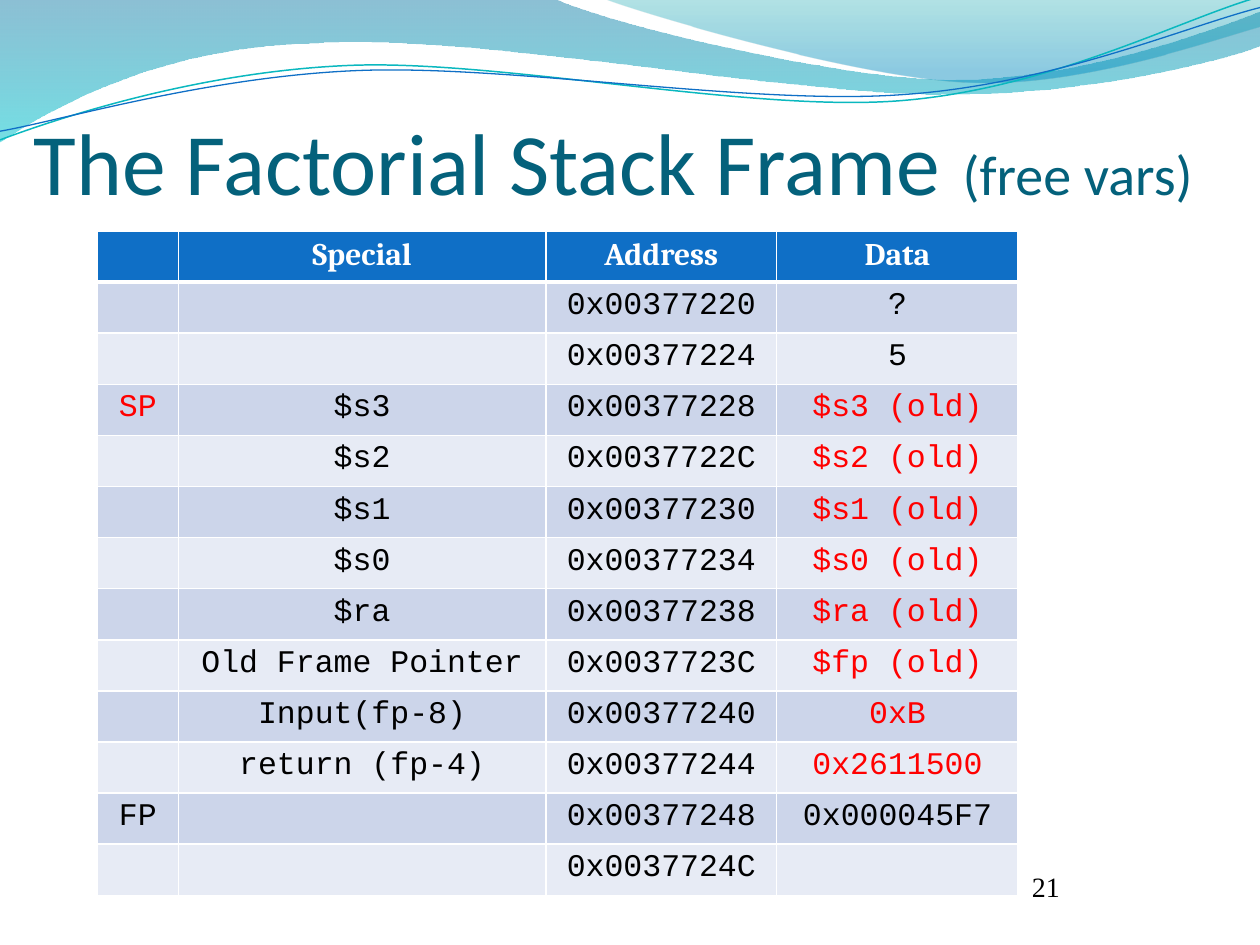
from lxml import etree
from pptx import Presentation
from pptx.dml.color import RGBColor
from pptx.enum.text import MSO_ANCHOR, PP_ALIGN
from pptx.oxml.ns import qn
from pptx.util import Pt

CENTER = PP_ALIGN.CENTER
BOTTOM = MSO_ANCHOR.BOTTOM

COLORS = {
    "title": "04617B", "black": "000000", "red": "FF0000", "white": "FFFFFF",
    "header": "0F6FC6", "odd": "CCD5EA", "even": "E7EBF5",
    "deep": "0074A1", "aqua": "00C6CF", "sea": "00A1A9", "sky": "008BBF",
    "teal line": "0AB8BF", "blue line": "0F6FC6",
}

TITLE = [("The Factorial Stack Frame", 50), (" ", 54), ("(free vars)", 32)]
PAGE_NUMBER = "21"

HEADER = ("", "Special", "Address", "Data")
FIRST_ADDRESS = 0x00377220
FRAME = [
    ("", "", "?"),
    ("", "", "5"),
    ("SP", "$s3", "$s3 (old)"),
    ("", "$s2", "$s2 (old)"),
    ("", "$s1", "$s1 (old)"),
    ("", "$s0", "$s0 (old)"),
    ("", "$ra", "$ra (old)"),
    ("", "Old Frame Pointer", "$fp (old)"),
    ("", "Input(fp-8)", "0xB"),
    ("", "return (fp-4)", "0x2611500"),
    ("FP", "", "0x000045F7"),
    ("", "", ""),
]
RED_TEXTS = {"SP", "0xB", "0x2611500"}
COLUMN_WIDTHS = (46.3, 210, 132, 138)
ROW_HEIGHT = 29.2

# Each wave is a start point and segments: one point is a line, three a curve.
FILLED_WAVES = [
    ((0, 0), [
        [(316.8, -0.7)],
        [(342.7, 12.2), (478.1, 45.4), (545.8, 45.4)],
        [(614.2, 45.4), (689.8, 18.7), (720, 6.5)],
        [(720.7, 25.9)],
        [(707.8, 31.7), (626.4, 54.7), (537.1, 54)],
        [(447.8, 54), (275, 20.2), (185, 24.5)],
        [(92.9, 25.9), (33.1, 59.8), (-0.7, 81.4)],
        [(0, 0)],
    ], [(0, "deep", 45), (1, "aqua", 55)]),
    ((344.9, -0.7), [
        [(366.5, 7.9), (491, 44.6), (553.7, 46.8)],
        [(616.3, 49.7), (691.9, 23), (720, 15.1)],
        [(720, 0)],
        [(344.9, -0.7)],
    ], [(0, "sea", 30), (0.8, "sky", 45)]),
]
LINE_ROTATION = 357.3
LINE_WAVES = [
    ((-1.4, 63), [
        [(33.8, 51.7), (114.1, 29.4), (199.8, 29.9)],
        [(284.9, 30.3), (425.8, 67.3), (512.4, 64.9)],
        [(599, 62.4), (676.5, 25.7), (720.2, 15.5)],
    ], "teal line", 0.85),
    ((-1.1, 58), [
        [(32.9, 53.8), (118.3, 32.5), (204.1, 33)],
        [(290.6, 33.4), (428.9, 63.8), (515.5, 61.4)],
        [(601.3, 59.6), (678.4, 30.1), (721.4, 21.3)],
    ], "blue line", 0.75),
]


def rgb(name):
    return RGBColor.from_string(COLORS[name])


def style_run(run, font, size, color, bold=False):
    run.font.name = font
    run.font.size = Pt(size)
    run.font.bold = bold
    run.font.color.rgb = rgb(color)


def add_wave(slide, start, segments, close):
    builder = slide.shapes.build_freeform(Pt(start[0]), Pt(start[1]))
    vertices = [(Pt(x), Pt(y)) for segment in segments for x, y in segment]
    builder.add_line_segments(vertices, close=close)
    shape = builder.convert_to_shape()
    shape.shadow.inherit = False
    steps = iter(list(shape._element.iter(qn("a:lnTo"))))
    for segment in segments:
        parts = [next(steps) for point in segment]
        if len(parts) == 3:
            curve = etree.Element(qn("a:cubicBezTo"))
            parts[0].addprevious(curve)
            for part in parts:
                curve.append(part[0])
                part.getparent().remove(part)
    return shape


def fill_gradient(shape, stops):
    shape.line.fill.background()
    shape.fill.gradient()
    shape.fill.gradient_angle = 270
    for stop, (position, color, opacity) in zip(shape.fill.gradient_stops, stops):
        stop.position = position
        stop.color.rgb = rgb(color)
    for element, (position, color, opacity) in zip(shape._element.iter(qn("a:gs")), stops):
        etree.SubElement(element[0], qn("a:alpha")).set("val", str(opacity * 1000))


def add_text_box(slide, left, top, width, height):
    frame = slide.shapes.add_textbox(Pt(left), Pt(top), Pt(width), Pt(height)).text_frame
    frame.word_wrap = True
    return frame


def set_borders(cell, top, bottom):
    properties = cell._tc.get_or_add_tcPr()
    sides = (("a:lnL", 1), ("a:lnR", 1), ("a:lnT", top), ("a:lnB", bottom))
    for index, (tag, width) in enumerate(sides):
        line = etree.Element(qn(tag), w=str(Pt(width)))
        fill = etree.SubElement(line, qn("a:solidFill"))
        etree.SubElement(fill, qn("a:srgbClr")).set("val", COLORS["white"])
        properties.insert(index, line)


def add_frame_table(slide):
    rows = [HEADER] + [
        (pointer, special, f"0x{FIRST_ADDRESS + 4 * index:08X}", data)
        for index, (pointer, special, data) in enumerate(FRAME)
    ]
    table = slide.shapes.add_table(
        len(rows), len(HEADER), Pt(55.6), Pt(132),
        Pt(sum(COLUMN_WIDTHS)), Pt(ROW_HEIGHT * len(rows))).table
    for column, width in zip(table.columns, COLUMN_WIDTHS):
        column.width = Pt(width)
    for row_index, row in enumerate(rows):
        table.rows[row_index].height = Pt(ROW_HEIGHT)
        is_header = row_index == 0
        fill = "header" if is_header else "odd" if row_index % 2 else "even"
        for column_index, text in enumerate(row):
            cell = table.cell(row_index, column_index)
            cell.fill.solid()
            cell.fill.fore_color.rgb = rgb(fill)
            set_borders(cell, 3 if row_index == 1 else 1, 3 if is_header else 1)
            paragraph = cell.text_frame.paragraphs[0]
            paragraph.text = text
            paragraph.alignment = CENTER
            for run in paragraph.runs:
                if is_header:
                    style_run(run, "Cambria", 18, "white", True)
                else:
                    is_red = text in RED_TEXTS or text.endswith("(old)")
                    style_run(run, "Courier New", 18, "red" if is_red else "black")


def main():
    presentation = Presentation()
    presentation.slide_width = Pt(720)
    presentation.slide_height = Pt(540)
    slide = presentation.slides.add_slide(presentation.slide_layouts[6])

    for start, segments, stops in FILLED_WAVES:
        fill_gradient(add_wave(slide, start, segments, True), stops)
    for start, segments, color, width in LINE_WAVES:
        shape = add_wave(slide, start, segments, False)
        shape.rotation = LINE_ROTATION
        shape.fill.background()
        shape.line.color.rgb = rgb(color)
        shape.line.width = Pt(width)

    number = add_text_box(slide, 589.7, 486, 77.8, 30.2)
    number.margin_left = number.margin_right = number.margin_top = number.margin_bottom = 0
    number.vertical_anchor = BOTTOM
    number.text = PAGE_NUMBER
    style_run(number.paragraphs[0].runs[0], "Times New Roman", 16, "black")

    title = add_text_box(slide, 12.2, 54, 684, 48.2).paragraphs[0]
    for text, size in TITLE:
        run = title.add_run()
        run.text = text
        style_run(run, "Calibri", size, "title")

    add_frame_table(slide)
    presentation.save("out.pptx")


if __name__ == "__main__":
    main()
